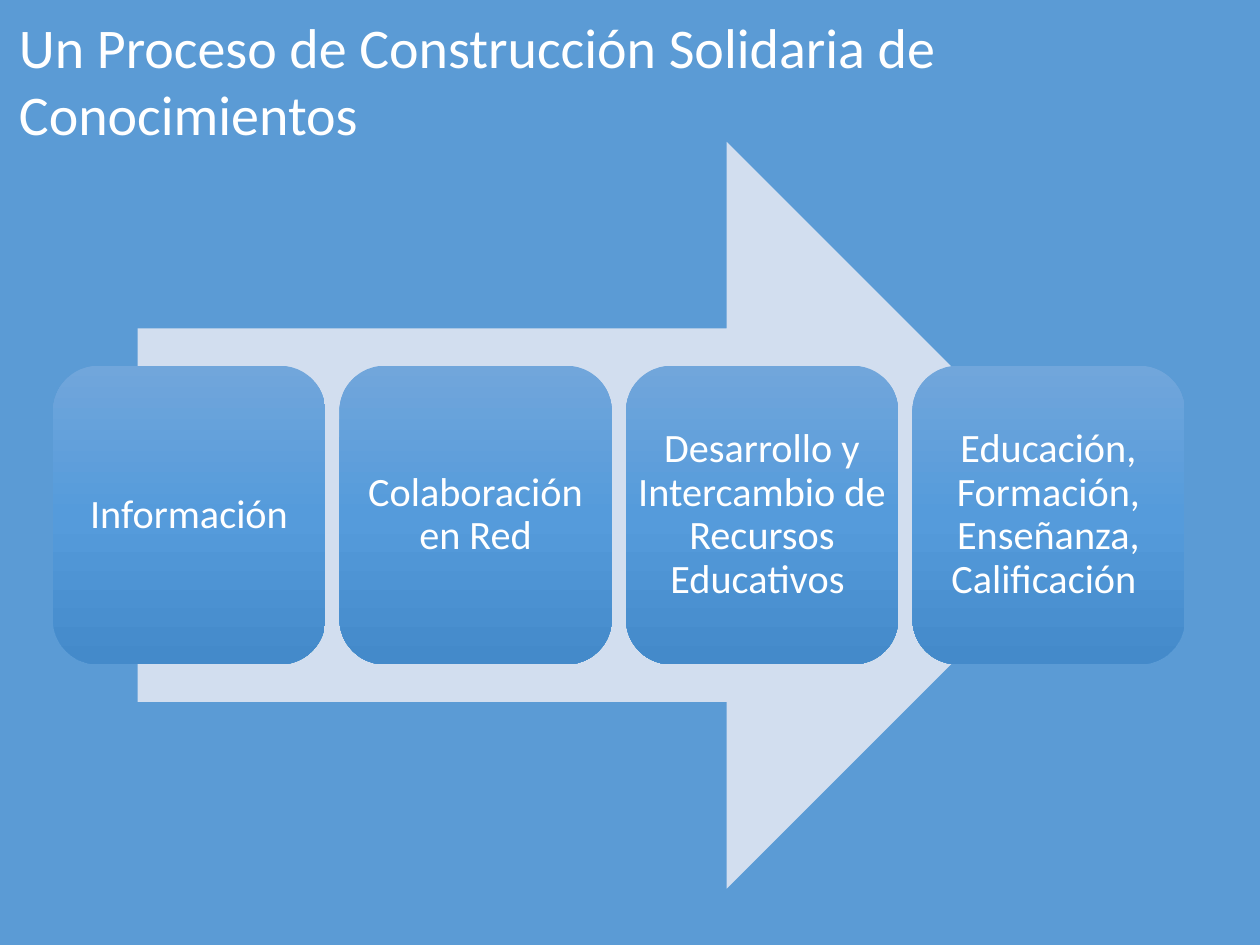
from copy import deepcopy
from pptx import Presentation
from pptx.dml.color import RGBColor
from pptx.enum.shapes import MSO_SHAPE
from pptx.enum.text import MSO_ANCHOR, MSO_AUTO_SIZE, PP_ALIGN
from pptx.oxml.ns import qn
from pptx.util import Pt

ARROW = MSO_SHAPE.RIGHT_ARROW
ROUND = MSO_SHAPE.ROUNDED_RECTANGLE
MIDDLE, TOP = MSO_ANCHOR.MIDDLE, MSO_ANCHOR.TOP
CENTER, LEFT = PP_ALIGN.CENTER, PP_ALIGN.LEFT
NO_FIT = MSO_AUTO_SIZE.NONE

COLORS = {
    "back": "5B9BD5",
    "arrow": "D2DEEF",
    "light": "71A6DB",
    "mid": "559BDB",
    "dark": "448ACA",
    "text": "FFFFFF",
}
STEPS = [
    "Información",
    "Colaboración en Red",
    "Desarrollo y Intercambio de Recursos Educativos ",
    "Educación, Formación, Enseñanza, Calificación ",
]


def rgb(name):
    return RGBColor.from_string(COLORS[name])


def write(frame, text, size, align, anchor, space):
    frame.word_wrap = True
    frame.auto_size = NO_FIT
    frame.vertical_anchor = anchor
    para = frame.paragraphs[0]
    para.alignment = align
    para.line_spacing = space
    para.space_before = Pt(0)
    run = para.add_run()
    run.text = text
    run.font.size = Pt(size)
    run.font.name = "Calibri"
    run.font.color.rgb = rgb("text")


deck = Presentation()
deck.slide_width, deck.slide_height = Pt(720), Pt(540)
slide = deck.slides.add_slide(deck.slide_layouts[5])
slide.background.fill.solid()
slide.background.fill.fore_color.rgb = rgb("back")

title = slide.shapes.title
title.left, title.top, title.width, title.height = Pt(3.6), Pt(3.6), Pt(707), Pt(85)
write(title.text_frame, "Un Proceso de Construcción Solidaria de Conocimientos",
      32, LEFT, TOP, 1.0)

arrow = slide.shapes.add_shape(ARROW, Pt(78.7), Pt(81), Pt(550), Pt(426.8))
arrow.shadow.inherit = False
arrow.fill.solid()
arrow.fill.fore_color.rgb = rgb("arrow")
arrow.line.fill.background()

left, top, width, height, gap = 30.3, 209, 155.6, 170.7, 8.1
for i, step in enumerate(STEPS):
    place = Pt(left + i * (width + gap)), Pt(top), Pt(width), Pt(height)
    card = slide.shapes.add_shape(ROUND, *place)
    card.shadow.inherit = False
    card.line.fill.background()
    card.fill.gradient()
    card.fill.gradient_angle = 270
    stops = card.fill.gradient_stops
    first = card.element.spPr.find(".//" + qn("a:gs"))
    first.addnext(deepcopy(first))
    stops = card.fill.gradient_stops
    for stop, spot, name in zip(stops, (0, 0.5, 1), ("light", "mid", "dark")):
        stop.position = spot
        stop.color.rgb = rgb(name)

    label = slide.shapes.add_textbox(*place).text_frame
    label.margin_left = label.margin_right = Pt(6)
    write(label, step, 23, CENTER, MIDDLE, 0.9)

deck.save("out.pptx")
